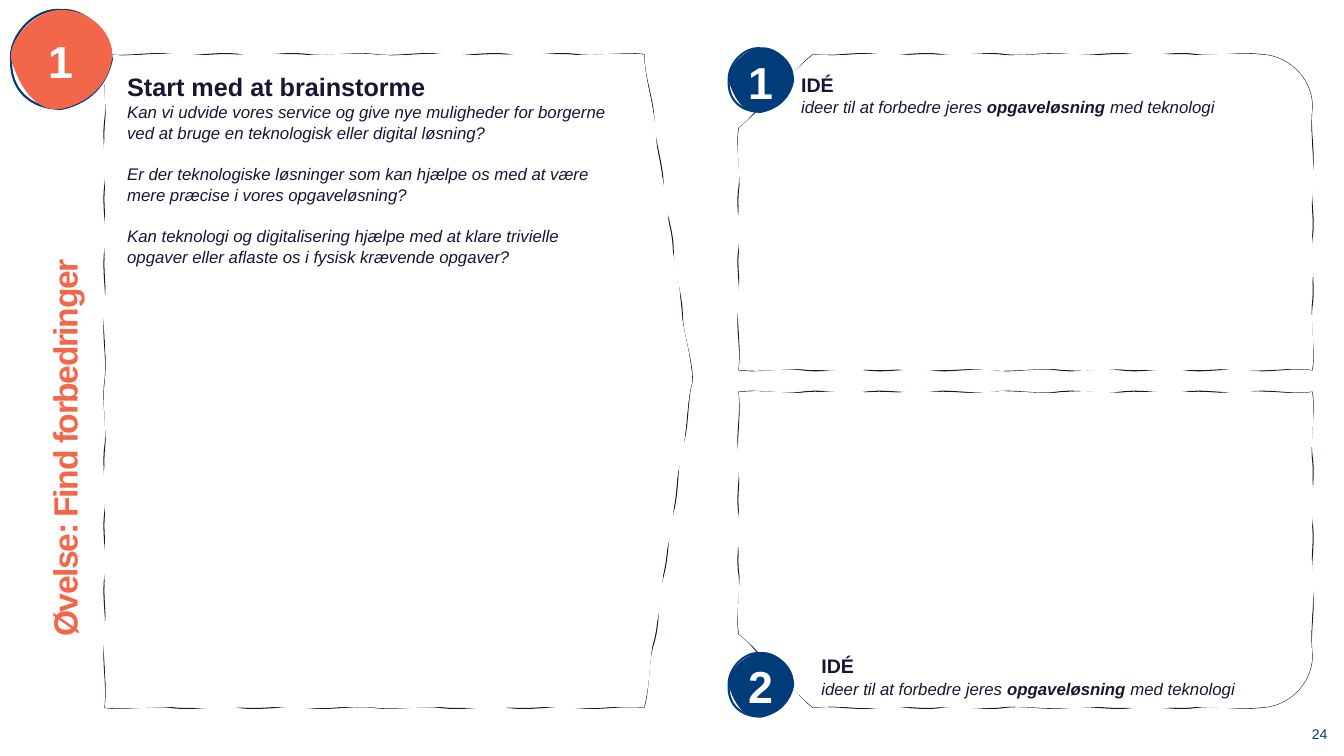
from math import hypot

from lxml import etree
from pptx import Presentation
from pptx.dml.color import RGBColor
from pptx.enum.text import MSO_ANCHOR, MSO_AUTO_SIZE, PP_ALIGN
from pptx.oxml.ns import qn
from pptx.util import Cm, Pt

LEFT, CENTER, RIGHT = PP_ALIGN.LEFT, PP_ALIGN.CENTER, PP_ALIGN.RIGHT
TOP, MIDDLE, BOTTOM = MSO_ANCHOR.TOP, MSO_ANCHOR.MIDDLE, MSO_ANCHOR.BOTTOM
GROW, FIXED = MSO_AUTO_SIZE.SHAPE_TO_FIT_TEXT, MSO_AUTO_SIZE.NONE
COLORS = {"ink": "181535", "navy": "003B7A", "coral": "F26749", "white": "FFFFFF"}
FONT = "Arial"
LINE_SPACING = 1.04
INDENT = Cm(1.27)

# Text content
TITLE = "Øvelse: Find forbedringer"
BRAINSTORM_HEADING = "Start med at brainstorme"
QUESTIONS = [
    "Kan vi udvide vores service og give nye muligheder for borgerne ved at bruge "
    "en teknologisk eller digital løsning?",
    "Er der teknologiske løsninger som kan hjælpe os med at være mere præcise i vores opgaveløsning?",
    "Kan teknologi og digitalisering hjælpe med at klare trivielle opgaver eller "
    "aflaste os i fysisk krævende opgaver?",
]
IDEA_HEADING = "IDÉ"
IDEA_RUNS = [("ideer til at forbedre jeres ", False), ("opgaveløsning", True), (" med teknologi", False)]
IDEA_BOXES = [(18.67, 1.68), (19.18, 16.33)]
PAGE_NUMBER = "24"

# Sketched shapes in hundredths of an inch
UNIT = Cm(2.54) / 100
ARROW_CORNERS = [(104, 54), (639, 54), (687, 378), (639, 702), (104, 702)]
IDEA_CORNERS = [(1249, 54), (807, 54), (733, 127), (733, 367), (1302, 367), (1302, 106)]
IDEA_ARC = (1302, 78, 1278, 54, 1249, 54)
MIRROR_SUM = 756  # top edge + bottom edge, so the lower panel mirrors the upper one
STROKE_STEP, FILL_STEP, WOBBLE = 65, 85, 3
BADGES = [  # number, left, top, width, height, color
    ("1", 723, 48, 64, 63, "navy"),
    ("2", 723, 648, 64, 63, "navy"),
    ("1", 11, 10, 100, 98, "coral"),
]

# Control points of each quarter of a badge, in percent of its box
QUARTER_ENDS = [(50, 0), (100, 50), (50, 100), (0, 50)]
BADGE_STROKE = [(-2, 26, 24, -3), (75, -2, 98, 24), (95, 74, 79, 94), (19, 100, -1, 81)]
BADGE_FILL = [(-3, 28, 28, -2), (80, -1, 104, 27), (97, 73, 78, 94), (24, 104, 8, 77)]


def wobbly_edges(corners, step, closed):
    """Join the corners with gently waving curves about one step long."""
    curves = []
    targets = corners[1:] + corners[:1] if closed else corners[1:]
    for (x1, y1), (x2, y2) in zip(corners, targets):
        length = hypot(x2 - x1, y2 - y1)
        pieces = max(1, round(length / step))
        across_x, across_y = (y1 - y2) / length * WOBBLE, (x2 - x1) / length * WOBBLE
        for piece in range(pieces):
            curve = []
            for part, side in ((1 / 3, 1), (2 / 3, -1), (1, 0)):
                along = (piece + part) / pieces
                curve += [round(x1 + (x2 - x1) * along + across_x * side),
                          round(y1 + (y2 - y1) * along + across_y * side)]
            curves.append(tuple(curve))
    return curves


def mirror(curves):
    return [tuple(MIRROR_SUM - v if i % 2 else v for i, v in enumerate(curve)) for curve in curves]


def badge_curves(controls, left, top, width, height):
    return [tuple(round(top + v * height / 100) if i % 2 else round(left + v * width / 100)
                  for i, v in enumerate(control + end))
            for control, end in zip(controls, QUARTER_ENDS)]


def add_sketch(stroke, filling, fill, line, line_width):
    """Draw a loose pen outline with a slightly different filled area on top of it."""
    ends = [curve[4:] for curve in stroke]
    left, top = (min(axis) for axis in zip(*ends))
    builder = slide.shapes.build_freeform(*ends[-1], scale=UNIT)
    builder.add_line_segments(ends, close=True)
    shape = builder.convert_to_shape()
    straight_path = shape.element.spPr.find(".//" + qn("a:path"))
    path_list, size = straight_path.getparent(), dict(straight_path.attrib)
    path_list.remove(straight_path)
    for curves, option in ((stroke, {"fill": "none"}), (filling, {"stroke": "0"})):
        path = etree.SubElement(path_list, qn("a:path"), {**size, **option})
        segments = [("a:moveTo", curves[-1][4:])] + [("a:cubicBezTo", curve) for curve in curves]
        for tag, values in segments:
            segment = etree.SubElement(path, qn(tag))
            for x, y in zip(values[::2], values[1::2]):
                etree.SubElement(segment, qn("a:pt"), x=str(x - left), y=str(y - top))
        etree.SubElement(path, qn("a:close"))
    shape.shadow.inherit = False
    shape.fill.solid()
    shape.fill.fore_color.rgb = RGBColor.from_string(COLORS[fill])
    shape.line.color.rgb = RGBColor.from_string(COLORS[line])
    shape.line.width = Pt(line_width)
    return shape


def place(shape, left, top, width, height):
    shape.left, shape.top, shape.width, shape.height = Cm(left), Cm(top), Cm(width), Cm(height)


def set_frame(shape, anchor=TOP, wrap=True, auto_size=FIXED):
    frame = shape.text_frame
    frame.auto_size, frame.word_wrap, frame.vertical_anchor = auto_size, wrap, anchor
    return frame


def write(frame, text, size, color="ink", bold=False, italic=False, align=LEFT,
          indent=0, before=0, spacing=None):
    """Add one paragraph; text is a string or a list of (text, bold) runs."""
    paragraph = frame.add_paragraph() if frame.text else frame.paragraphs[0]
    properties = paragraph._p.get_or_add_pPr()
    properties.set("marL", str(indent))
    properties.set("indent", "0")
    etree.SubElement(properties, qn("a:buNone"))
    paragraph.alignment, paragraph.line_spacing = align, LINE_SPACING
    paragraph.space_before, paragraph.space_after = Pt(before), Pt(0)
    for part, part_bold in [(text, bold)] if isinstance(text, str) else text:
        run = paragraph.add_run()
        run.text = part
        run.font.name, run.font.size = FONT, Pt(size)
        run.font.bold, run.font.italic = part_bold, italic
        run.font.color.rgb = RGBColor.from_string(COLORS[color])
        if spacing is not None:
            run.font._element.set("spc", str(spacing))


presentation = Presentation()
presentation.slide_width, presentation.slide_height = Cm(33.87), Cm(19.05)
slide = presentation.slides.add_slide(presentation.slide_layouts[1])

# Panels
arrow = [wobbly_edges(ARROW_CORNERS, step, closed=True) for step in (STROKE_STEP, FILL_STEP)]
idea = [wobbly_edges(IDEA_CORNERS, step, closed=False) + [IDEA_ARC] for step in (STROKE_STEP, FILL_STEP)]
for stroke, filling in (arrow, idea, [mirror(curves) for curves in idea]):
    add_sketch(stroke, filling, "white", "ink", 0.75)

# Numbered badges
for number, *box, color in BADGES:
    badge = add_sketch(badge_curves(BADGE_STROKE, *box), badge_curves(BADGE_FILL, *box), color, "navy", 1.5)
    write(set_frame(badge, MIDDLE), number, 32, color="white", bold=True, align=CENTER)

# Brainstorm questions and sideways title, brought in front of the panels
title, body = slide.shapes.title, slide.placeholders[1]
for placeholder in (body, title):
    placeholder.element.getparent().append(placeholder.element)
place(body, 1.68, 1.63, 13.94, 10.59)
frame = set_frame(body)
write(frame, BRAINSTORM_HEADING, 18, bold=True, indent=INDENT)
for i, question in enumerate(QUESTIONS):
    write(frame, question, 12, italic=True, indent=INDENT, before=14.4 if i else 0)
place(title, -8.61, 5.33, 20.52, 1.42)
title.rotation = 270
write(set_frame(title), TITLE, 24, color="coral", bold=True, spacing=-100)

# Idea captions
for left, top in IDEA_BOXES:
    caption = slide.shapes.add_textbox(Cm(left), Cm(top), Cm(12.29), Cm(1.37))
    frame = set_frame(caption, wrap=False, auto_size=GROW)
    write(frame, IDEA_HEADING, 14, bold=True, indent=INDENT)
    write(frame, IDEA_RUNS, 12, italic=True, indent=INDENT)

# Page number
page_box = slide.shapes.add_textbox(Cm(31.9), Cm(17.48), Cm(1.55), Cm(1.22))
frame = set_frame(page_box, BOTTOM)
frame.margin_left = frame.margin_right = frame.margin_top = frame.margin_bottom = 0
write(frame, PAGE_NUMBER, 10, color="navy", align=RIGHT)

presentation.save("out.pptx")
